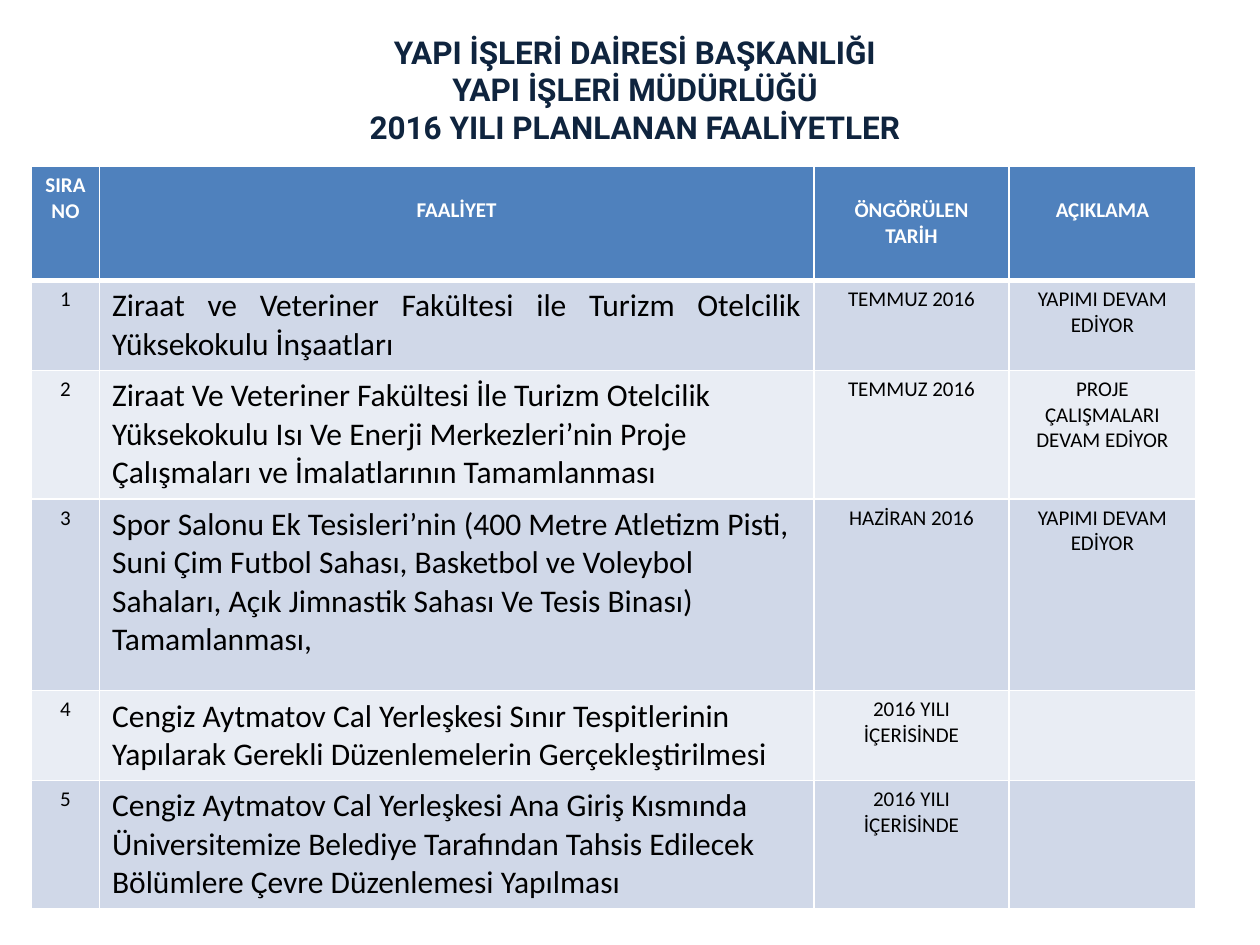
from lxml.etree import SubElement
from pptx import Presentation
from pptx.dml.color import RGBColor
from pptx.enum.text import MSO_ANCHOR, PP_ALIGN
from pptx.oxml.ns import qn
from pptx.util import Inches, Pt

NAVY = RGBColor(0x0F, 0x24, 0x3E)
BLUE = RGBColor(0x4F, 0x81, 0xBD)
LIGHT_BLUE = RGBColor(0xD0, 0xD8, 0xE8)
PALE_BLUE = RGBColor(0xE9, 0xED, 0xF4)
WHITE = RGBColor(0xFF, 0xFF, 0xFF)
BLACK = RGBColor(0x00, 0x00, 0x00)

TITLE_LINES = [
    "YAPI İŞLERİ DAİRESİ BAŞKANLIĞI",
    "YAPI İŞLERİ MÜDÜRLÜĞÜ",
    "2016 YILI PLANLANAN FAALİYETLER",
]
HEADERS = ["SIRA NO", "FAALİYET", "ÖNGÖRÜLEN TARİH", "AÇIKLAMA"]
ACTIVITIES = [
    ("Ziraat ve Veteriner Fakültesi ile Turizm Otelcilik Yüksekokulu İnşaatları",
     "TEMMUZ 2016", "YAPIMI DEVAM EDİYOR"),
    ("Ziraat Ve Veteriner Fakültesi İle Turizm Otelcilik Yüksekokulu Isı Ve Enerji "
     "Merkezleri’nin Proje Çalışmaları ve İmalatlarının Tamamlanması",
     "TEMMUZ 2016", "PROJE ÇALIŞMALARI DEVAM EDİYOR"),
    ("Spor Salonu Ek Tesisleri’nin (400 Metre Atletizm Pisti, Suni Çim Futbol Sahası, "
     "Basketbol ve Voleybol Sahaları, Açık Jimnastik Sahası Ve Tesis Binası) Tamamlanması,",
     "HAZİRAN 2016", "YAPIMI DEVAM EDİYOR"),
    ("Cengiz Aytmatov Cal Yerleşkesi Sınır Tespitlerinin Yapılarak Gerekli "
     "Düzenlemelerin Gerçekleştirilmesi",
     "2016 YILI İÇERİSİNDE", ""),
    ("Cengiz Aytmatov Cal Yerleşkesi Ana Giriş Kısmında Üniversitemize Belediye "
     "Tarafından Tahsis Edilecek Bölümlere Çevre Düzenlemesi Yapılması",
     "2016 YILI İÇERİSİNDE", ""),
]
COLUMN_SHARES = [5.4, 56.7, 15.5, 14.8]
ROW_SHARES = [12.1, 9.5, 13.6, 20.3, 9.5, 13.6]


class SlideBuilder:
    """Holds the style and the current slide; lengths are percentages of the slide."""

    title_font = "Roboto"
    body_font = "Calibri"
    large = Pt(18)
    small = Pt(12)

    def __init__(self, presentation):
        self.width = presentation.slide_width
        self.height = presentation.slide_height
        self.slide = presentation.slides.add_slide(presentation.slide_layouts[6])

    def across(self, share):
        return round(self.width * share / 100)

    def down(self, share):
        return round(self.height * share / 100)

    def set_text(self, text_frame, text, font_name, size, color, bold=False,
                 alignment=PP_ALIGN.CENTER):
        paragraph = text_frame.paragraphs[0]
        paragraph.text = text
        paragraph.alignment = alignment
        font = paragraph.font
        font.name, font.size, font.bold = font_name, size, bold
        font.color.rgb = color

    def title(self, lines, left, top, width, height):
        shape = self.slide.shapes.add_textbox(
            self.across(left), self.down(top), self.across(width), self.down(height))
        text_frame = shape.text_frame
        text_frame.word_wrap = True
        text_frame.vertical_anchor = MSO_ANCHOR.BOTTOM
        self.set_text(text_frame, "\v".join(lines), self.title_font, self.large, NAVY, True)

    def border(self, cell, bottom_width):
        properties = cell._tc.get_or_add_tcPr()
        for side in "LRTB":
            width = bottom_width if side == "B" else 1
            line = SubElement(properties, qn(f"a:ln{side}"), w=str(Pt(width)))
            fill = SubElement(line, qn("a:solidFill"))
            SubElement(fill, qn("a:srgbClr"), val=str(WHITE))

    def header_cell(self, cell, text, column):
        self.border(cell, 3)
        cell.fill.solid()
        cell.fill.fore_color.rgb = BLUE
        if column > 0:
            cell.margin_top = Inches(0.25)
        self.set_text(cell.text_frame, text, self.body_font, self.small, WHITE, True)

    def body_cell(self, cell, text, row, column):
        self.border(cell, 1)
        cell.fill.solid()
        cell.fill.fore_color.rgb = LIGHT_BLUE if row % 2 else PALE_BLUE
        size, alignment = self.small, PP_ALIGN.CENTER
        if column == 1:
            size = self.large
            alignment = PP_ALIGN.JUSTIFY if row == 1 else PP_ALIGN.LEFT
        self.set_text(cell.text_frame, text, self.body_font, size, BLACK, alignment=alignment)

    def table(self, headers, records, left, top, column_shares, row_shares):
        table = self.slide.shapes.add_table(
            len(row_shares), len(column_shares), self.across(left), self.down(top),
            self.across(sum(column_shares)), self.down(sum(row_shares))).table
        for column, share in zip(table.columns, column_shares):
            column.width = self.across(share)
        for row, share in zip(table.rows, row_shares):
            row.height = self.down(share)
        for column, text in enumerate(headers):
            self.header_cell(table.cell(0, column), text, column)
        for row, record in enumerate(records, start=1):
            for column, text in enumerate((str(row), *record)):
                self.body_cell(table.cell(row, column), text, row, column)


def main():
    presentation = Presentation()
    presentation.slide_width = Inches(10)
    presentation.slide_height = Inches(7.5)
    builder = SlideBuilder(presentation)
    builder.title(TITLE_LINES, 5, 4.4, 90.8, 11.7)
    builder.table(HEADERS, ACTIVITIES, 2.5, 17.6, COLUMN_SHARES, ROW_SHARES)
    presentation.save("out.pptx")


if __name__ == "__main__":
    main()
